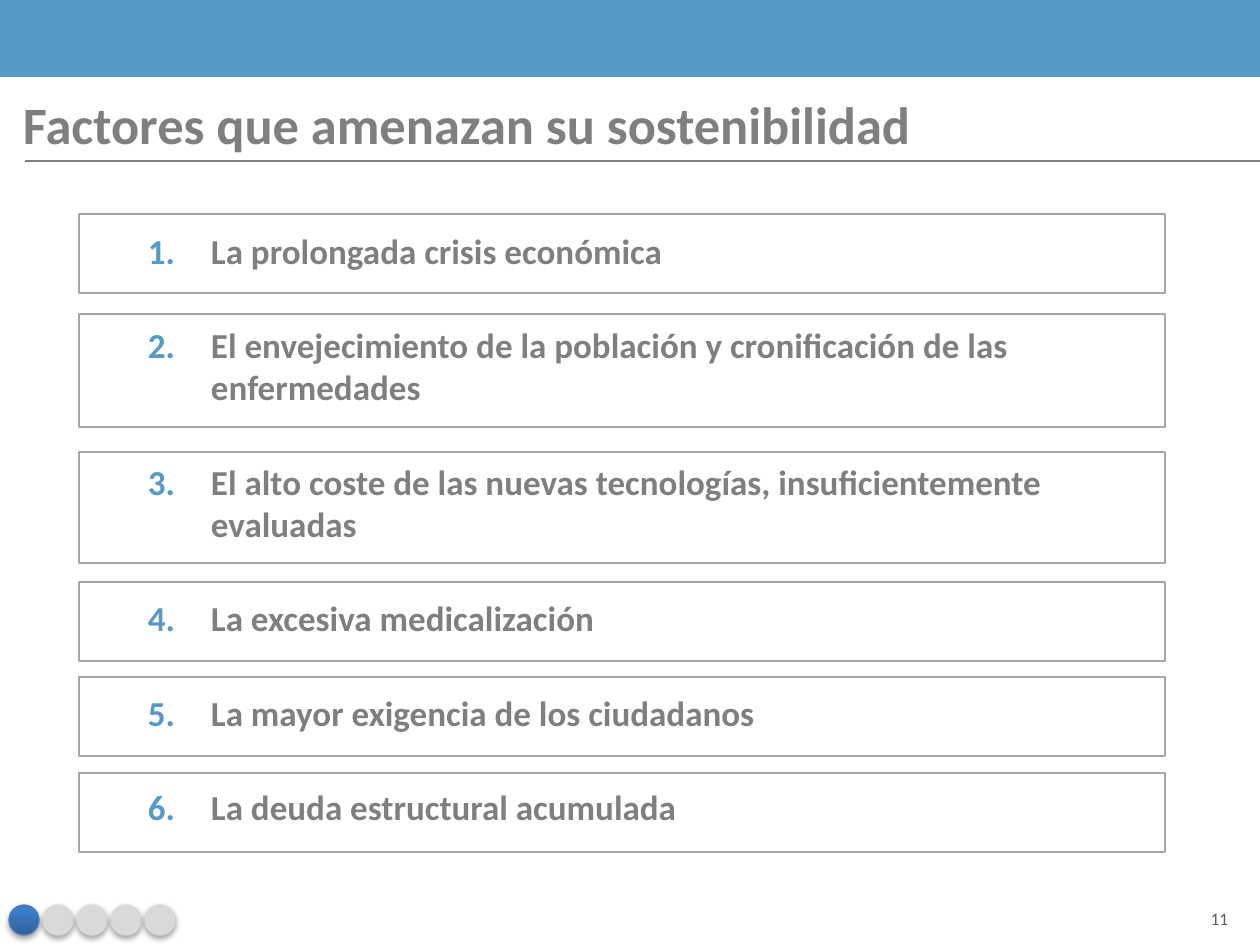
from lxml.etree import SubElement
from pptx import Presentation
from pptx.dml.color import RGBColor
from pptx.enum.shapes import MSO_CONNECTOR, MSO_SHAPE
from pptx.enum.text import MSO_ANCHOR, PP_ALIGN
from pptx.oxml.ns import qn
from pptx.util import Emu, Pt

PX = 914400 / 126
FONT = "Calibri"
BLUE = RGBColor(0x55, 0x99, 0xC9)
GREY = RGBColor(0x7F, 0x7F, 0x7F)
PAGE_GREY = RGBColor(0x5F, 0x5F, 0x5F)
FRAME_GREY = RGBColor(0xA6, 0xA6, 0xA6)
DOT_GREY = RGBColor(0xD9, 0xD9, 0xD9)
DOT_EDGE = RGBColor(0x4B, 0x7E, 0xBC)
DOT_DARK = RGBColor(0x2F, 0x5F, 0x99)
DOT_LIGHT = RGBColor(0x3D, 0x7C, 0xC7)

FACTORS = [
    ("La prolongada crisis económica", 214, 79),
    ("El envejecimiento de la población y cronificación de las enfermedades", 314, 113),
    ("El alto coste de las nuevas tecnologías, insuficientemente evaluadas", 452, 111),
    ("La excesiva medicalización", 582, 79),
    ("La mayor exigencia de los ciudadanos", 677, 79),
    ("La deuda estructural acumulada", 773, 79),
]


def px(length):
    """Turn a length in px into EMU."""
    return Emu(round(length * PX))


def add_outline(slide, preset, box, fill=None, edge=None):
    """Add a preset shape with an optional fill and thin edge."""
    shape = slide.shapes.add_shape(preset, *map(px, box))
    shape.shadow.inherit = False
    if fill is None:
        shape.fill.background()
    else:
        shape.fill.solid()
        shape.fill.fore_color.rgb = fill
    if edge is None:
        shape.line.fill.background()
    else:
        shape.line.color.rgb = edge
        shape.line.width = Pt(0.75)
    return shape


def add_frame(slide, box, inset):
    """Add a wrapping text box and return its text frame."""
    frame = slide.shapes.add_textbox(*map(px, box)).text_frame
    frame.word_wrap = True
    frame.margin_left = frame.margin_right = px(inset)
    frame.margin_top = frame.margin_bottom = px(inset)
    return frame


def add_words(paragraph, words, size, color, bold=True):
    """Add one formatted run to a paragraph."""
    run = paragraph.add_run()
    run.text = words
    run.font.name = FONT
    run.font.size = Pt(size)
    run.font.bold = bold
    run.font.color.rgb = color


def add_number(paragraph, indent):
    """Give a paragraph a blue automatic number with a hanging indent."""
    props = paragraph._p.get_or_add_pPr()
    props.set("marL", str(px(indent)))
    props.set("indent", str(-px(indent)))
    tint = SubElement(props, qn("a:buClr"))
    SubElement(tint, qn("a:srgbClr"), val=str(BLUE))
    SubElement(props, qn("a:buFont"), typeface=FONT)
    SubElement(props, qn("a:buAutoNum"), type="arabicPeriod")


def add_drop_shadow(shape):
    """Put a soft shadow below a shape."""
    effects = shape._element.spPr.find(qn("a:effectLst"))
    drop = SubElement(effects, qn("a:outerShdw"), blurRad="40000", dist="23000",
                      dir="5400000", rotWithShape="0")
    black = SubElement(drop, qn("a:srgbClr"), val="000000")
    SubElement(black, qn("a:alpha"), val="35000")


def add_heading(slide, left, top, width):
    """Place the top band, the title and the rule under it."""
    add_outline(slide, MSO_SHAPE.RECTANGLE, (left, top, width, 77), BLUE)
    title = add_frame(slide, (left + 8, top + 77, width - 16, 93), 15)
    add_words(title.paragraphs[0], "Factores que amenazan su sostenibilidad", 30, GREY)
    level = px(top + 161)
    rule = slide.shapes.add_connector(
        MSO_CONNECTOR.STRAIGHT, px(left + 25), level, px(left + width), level)
    rule.line.color.rgb = GREY
    rule.line.width = Pt(0.75)
    SubElement(rule._element.spPr, qn("a:effectLst"))


def add_factors(slide, left, top, width, height):
    """Place the numbered factors and a frame round each of them."""
    numbered = add_frame(slide, (left + 54, top, width - 94, height), 15)
    for index, (factor, frame_top, frame_height) in enumerate(FACTORS):
        paragraph = numbered.paragraphs[0] if index == 0 else numbered.add_paragraph()
        add_number(paragraph, 63)
        paragraph.space_before = Pt(12 if index else 0)
        paragraph.space_after = Pt(18)
        add_words(paragraph, factor, 20, GREY)
        add_outline(slide, MSO_SHAPE.RECTANGLE,
                    (left, frame_top, width, frame_height), edge=FRAME_GREY)


def add_progress(slide, left, top, size, step, count=5):
    """Place the row of progress dots, the first one active."""
    for index in range(count):
        dot = add_outline(slide, MSO_SHAPE.OVAL, (left + index * step, top, size, size),
                          DOT_GREY, DOT_GREY if index else DOT_EDGE)
        add_drop_shadow(dot)
        if index == 0:
            dot.fill.gradient()
            dot.fill.gradient_angle = 90
            dark, light = dot.fill.gradient_stops
            dark.color.rgb = DOT_DARK
            light.color.rgb = DOT_LIGHT
            light.position = 0.8


def add_page_number(slide, left, top, width, height):
    """Place the page number in the middle of its box."""
    page = add_frame(slide, (left, top, width, height), 6)
    page.vertical_anchor = MSO_ANCHOR.MIDDLE
    page.paragraphs[0].alignment = PP_ALIGN.CENTER
    add_words(page.paragraphs[0], "11", 10, PAGE_GREY, bold=False)


def main():
    """Build and save the slide."""
    deck = Presentation()
    deck.slide_width, deck.slide_height = px(1260), px(945)
    slide = deck.slides.add_slide(deck.slide_layouts[6])
    add_heading(slide, 0, 0, 1260)
    add_factors(slide, 79, 214, 1086, 634)
    add_progress(slide, 9, 905, 30, 34)
    add_page_number(slide, 1188, 897, 63, 42)
    deck.save("out.pptx")


if __name__ == "__main__":
    main()
